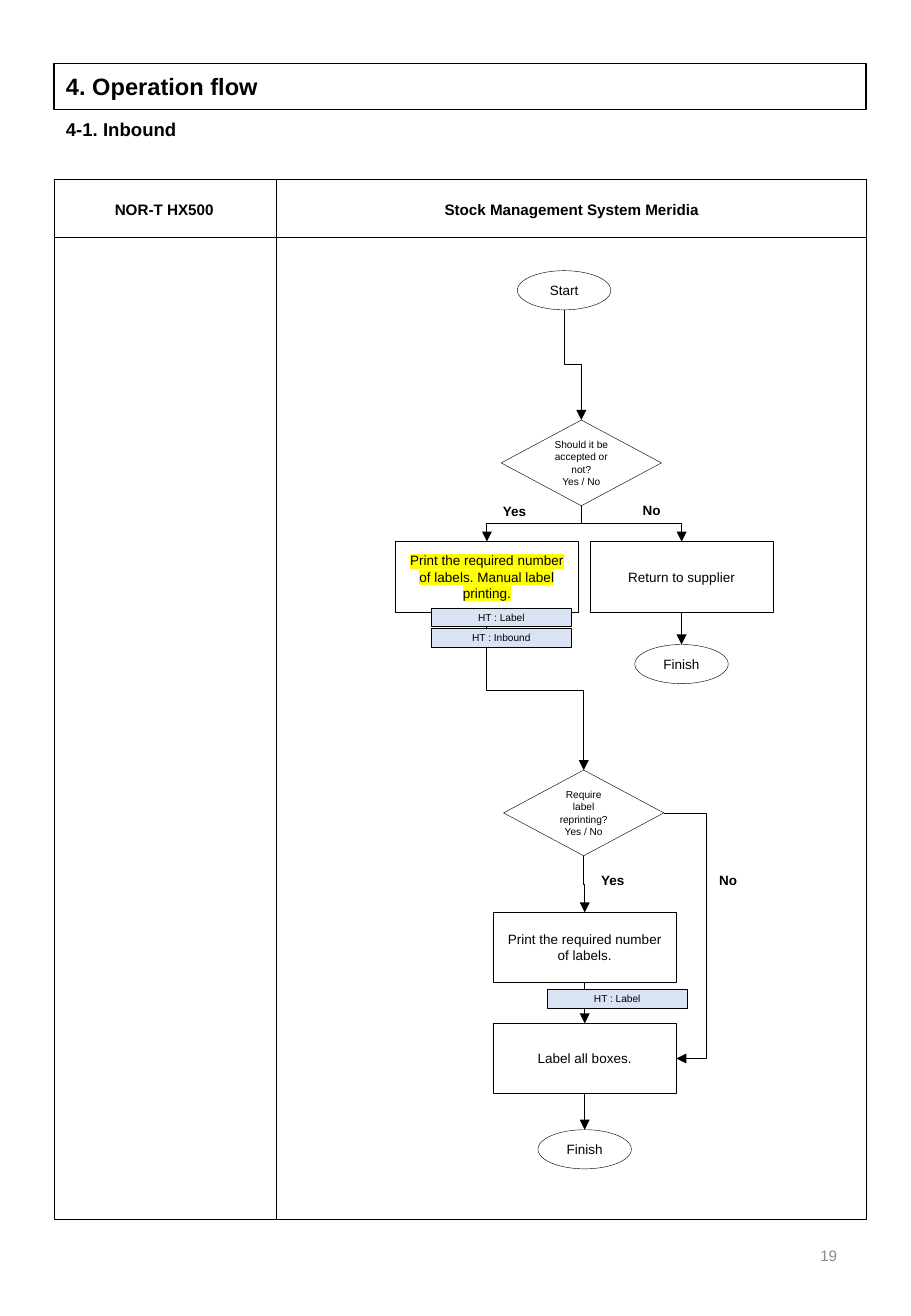
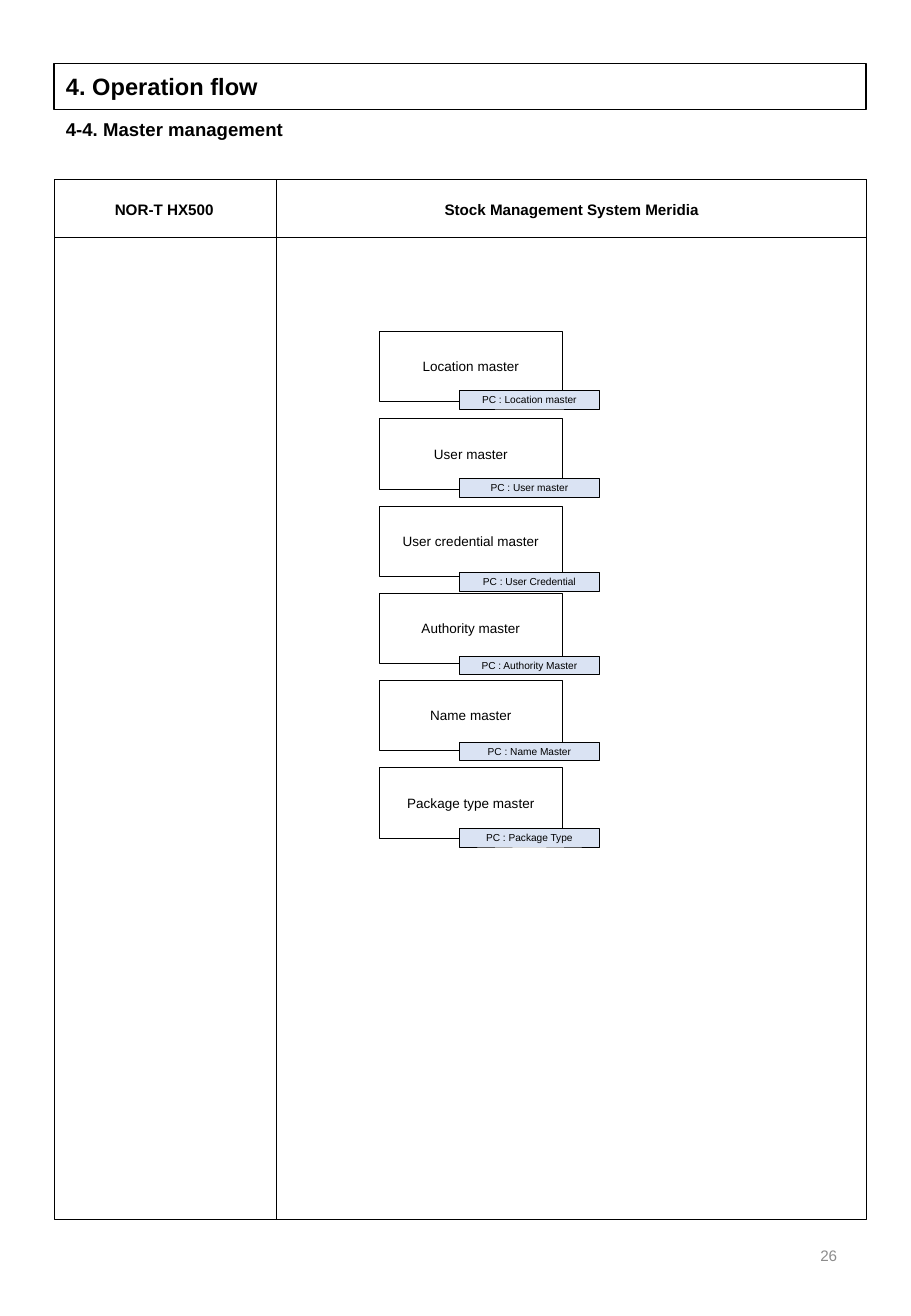
"""Build two operation-flow slides: the inbound flowchart and the master management list."""
from dataclasses import dataclass

from lxml import etree
from pptx import Presentation
from pptx.dml.color import RGBColor
from pptx.enum.shapes import MSO_CONNECTOR, MSO_SHAPE
from pptx.enum.text import MSO_ANCHOR, PP_ALIGN
from pptx.oxml.ns import qn
from pptx.util import Pt

RECT = MSO_SHAPE.RECTANGLE
OVAL = MSO_SHAPE.OVAL
DECISION = MSO_SHAPE.FLOWCHART_DECISION
STRAIGHT = MSO_CONNECTOR.STRAIGHT
ELBOW = MSO_CONNECTOR.ELBOW
LEFT, CENTER, RIGHT = PP_ALIGN.LEFT, PP_ALIGN.CENTER, PP_ALIGN.RIGHT
TOP, MIDDLE = MSO_ANCHOR.TOP, MSO_ANCHOR.MIDDLE

FONT = "Arial"
BLACK, GRAY, TAG_BLUE, YELLOW = "000000", "8C8C8C", "DAE3F3", "FFFF00"
HAIRLINE = 0.25
FRAME_X, FRAME_Y, FRAME_W, FRAME_H = 32, 106.3, 481.5, 616.2
HEADER_H = 34
DIVIDER_X = 164
SIDE_TOP, SIDE_BOTTOM, SIDE_RIGHT = 0, 2, 3
OVAL_BOTTOM = 4


@dataclass(frozen=True)
class Kind:
    shape: int
    w: float
    h: float
    size: float
    fill: str | None = None


BOX = Kind(RECT, 108.7, 41.6, 8)
CHOICE = Kind(DECISION, 95, 50.8, 6)
TERMINAL = Kind(OVAL, 55.4, 23.2, 8)
TAG = Kind(RECT, 83, 11, 6, TAG_BLUE)


@dataclass(frozen=True)
class Node:
    kind: Kind
    text: str
    cx: float
    top: float
    highlight: str | None = None


@dataclass(frozen=True)
class Link:
    start: str
    end: str
    bend_x: float | None = None


@dataclass(frozen=True)
class Answer:
    text: str
    x: float
    y: float


STEPS = {
    "start": Node(TERMINAL, "Start", 334.4, 160.4),
    "accept": Node(CHOICE, "Should it be accepted or not?\nYes / No", 344.6, 248.9),
    "manual": Node(BOX, "Print the required number of labels. Manual label printing.",
                   288.6, 320.9, YELLOW),
    "return": Node(BOX, "Return to supplier", 404, 320.9),
    "returned": Node(TERMINAL, "Finish", 404, 381.9),
    "reprint": Node(CHOICE, "Require label reprinting?\nYes / No", 346, 456.3),
    "print": Node(BOX, "Print the required number of labels.", 346.6, 540.6),
    "label": Node(BOX, "Label all boxes.", 346.6, 606.4),
    "finish": Node(TERMINAL, "Finish", 346.6, 669.4),
}
LINKS = [
    Link("start", "accept"),
    Link("accept", "manual"),
    Link("accept", "return"),
    Link("return", "returned"),
    Link("manual", "reprint"),
    Link("reprint", "print"),
    Link("print", "label"),
    Link("reprint", "label", 418.7),
    Link("label", "finish"),
]
INBOUND_TAGS = [
    Node(TAG, "HT : Label", 297.2, 360.4),
    Node(TAG, "HT : Inbound", 297.2, 372.4),
    Node(TAG, "HT : Label", 365.9, 586.2),
]
ANSWERS = [
    Answer("Yes", 286.6, 294.2),
    Answer("No", 367.9, 293.8),
    Answer("Yes", 344.9, 513.4),
    Answer("No", 413.3, 513.4),
]
MASTERS = [
    ("Location master", "PC : Location master", 231.4),
    ("User master", "PC : User master", 283.5),
    ("User credential master", "PC : User Credential", 339.2),
    ("Authority master", "PC : Authority Master", 388.8),
    ("Name master", "PC : Name Master", 439.8),
    ("Package type master", "PC : Package Type", 490.8),
]
MASTER_X, MASTER_Y, MASTER_PITCH, MASTER_TAG_X = 279.1, 196.4, 51.7, 313.8


def rgb(color: str) -> RGBColor:
    return RGBColor.from_string(color)


def write(tf, text: str, *, size: float, bold: bool = False, color: str = BLACK,
          align=CENTER, anchor=MIDDLE, highlight: str | None = None) -> None:
    tf.word_wrap = True
    tf.vertical_anchor = anchor
    for i, line in enumerate(text.split("\n")):
        p = tf.add_paragraph() if i else tf.paragraphs[0]
        p.alignment = align
        r = p.add_run()
        r.text = line
        r.font.size = Pt(size)
        r.font.bold = bold
        r.font.color.rgb = rgb(color)
        r.font.name = FONT
        if highlight:
            mark = etree.Element(qn("a:highlight"))
            etree.SubElement(mark, qn("a:srgbClr"), val=highlight)
            r.font._element.find(qn("a:solidFill")).addnext(mark)


def add_text(s, text: str, x: float, y: float, w: float, h: float, **fmt) -> None:
    tb = s.shapes.add_textbox(Pt(x), Pt(y), Pt(w), Pt(h))
    write(tb.text_frame, text, **fmt)


def add_outline(s, shape: int, x: float, y: float, w: float, h: float, *,
                line: float = HAIRLINE, fill: str | None = None):
    sp = s.shapes.add_shape(shape, Pt(x), Pt(y), Pt(w), Pt(h))
    sp.shadow.inherit = False
    if fill:
        sp.fill.solid()
        sp.fill.fore_color.rgb = rgb(fill)
    else:
        sp.fill.background()
    sp.line.color.rgb = rgb(BLACK)
    sp.line.width = Pt(line)
    return sp


def add_node(s, node: Node):
    k = node.kind
    sp = add_outline(s, k.shape, node.cx - k.w / 2, node.top, k.w, k.h, fill=k.fill)
    write(sp.text_frame, node.text, size=k.size, highlight=node.highlight)
    return sp


def add_line(s, kind: int, x1: float, y1: float, x2: float, y2: float, arrow: bool = False):
    c = s.shapes.add_connector(kind, Pt(x1), Pt(y1), Pt(x2), Pt(y2))
    c.line.color.rgb = rgb(BLACK)
    c.line.width = Pt(0.5)
    if arrow:
        etree.SubElement(c.line._get_or_add_ln(), qn("a:tailEnd"), type="triangle")
    etree.SubElement(c.element.spPr, qn("a:effectLst"))
    return c


def turn_downward(c, x1: float, y1: float, x2: float, y2: float) -> None:
    run, drop = abs(x2 - x1), y2 - y1
    c.left, c.top = Pt((x1 + x2 - drop) / 2), Pt((y1 + y2 - run) / 2)
    c.width, c.height = Pt(drop), Pt(run)
    xfrm = c.element.spPr.find(qn("a:xfrm"))
    xfrm.set("rot", str((270 if x2 > x1 else 90) * 60000))
    xfrm.set("flipH", "1" if x2 > x1 else "0")


def add_link(s, link: Link, shapes: dict) -> None:
    a, b = STEPS[link.start], STEPS[link.end]
    if link.bend_x is None:
        ends = a.cx, a.top + a.kind.h, b.cx, b.top
        sides = SIDE_BOTTOM, SIDE_TOP
    else:
        ends = (a.cx + a.kind.w / 2, a.top + a.kind.h / 2,
                b.cx + b.kind.w / 2, b.top + b.kind.h / 2)
        sides = SIDE_RIGHT, SIDE_RIGHT
    x1, _, x2, _ = ends
    c = add_line(s, STRAIGHT if x1 == x2 else ELBOW, *ends, arrow=True)
    c.begin_connect(shapes[link.start], sides[0])
    c.end_connect(shapes[link.end], sides[1])
    if a.kind is TERMINAL:
        c.element.find(".//" + qn("a:stCxn")).set("idx", str(OVAL_BOTTOM))
    if link.bend_x is not None:
        ratio = round((link.bend_x - x1) / (x2 - x1) * 100000)
        guides = c.element.find(".//" + qn("a:avLst"))
        etree.SubElement(guides, qn("a:gd"), name="adj1", fmla=f"val {ratio}")
    elif x1 != x2:
        turn_downward(c, *ends)


def add_page(prs, subtitle: str, number: int):
    s = prs.slides.add_slide(prs.slide_layouts[6])
    add_text(s, str(number), 381.6, 723, 121.7, 41.8, size=9, color=GRAY, align=RIGHT)
    title = add_outline(s, RECT, FRAME_X, 37.6, FRAME_W, 27.3, line=1)
    write(title.text_frame, "4. Operation flow", size=14, bold=True, align=LEFT)
    add_text(s, subtitle, FRAME_X, 66.2, FRAME_W, 21, size=11, bold=True,
             align=LEFT, anchor=TOP)
    for h in (FRAME_H, HEADER_H):
        add_outline(s, RECT, FRAME_X, FRAME_Y, FRAME_W, h)
    add_line(s, STRAIGHT, DIVIDER_X, FRAME_Y, DIVIDER_X, FRAME_Y + FRAME_H)
    right = FRAME_X + FRAME_W
    for text, x, end in (("NOR-T HX500", 30.6, DIVIDER_X),
                         ("Stock Management System Meridia", DIVIDER_X, right)):
        add_text(s, text, x, FRAME_Y + 0.5, end - x, HEADER_H, size=9, bold=True)
    return s


def build_inbound(prs) -> None:
    s = add_page(prs, "4-1. Inbound", 19)
    shapes = {name: add_node(s, node) for name, node in STEPS.items()}
    for link in LINKS:
        add_link(s, link, shapes)
    for tag in INBOUND_TAGS:
        add_node(s, tag)
    for answer in ANSWERS:
        add_text(s, answer.text, answer.x, answer.y, 36.7, 16.6, size=8, bold=True)


def build_masters(prs) -> None:
    s = add_page(prs, "4-4. Master management", 26)
    for i, (name, _, _) in enumerate(MASTERS):
        add_node(s, Node(BOX, name, MASTER_X, MASTER_Y + i * MASTER_PITCH))
    for _, tag, top in MASTERS:
        add_node(s, Node(TAG, tag, MASTER_TAG_X, top))


def main() -> None:
    prs = Presentation()
    prs.slide_width, prs.slide_height = Pt(540), Pt(779.76)
    build_inbound(prs)
    build_masters(prs)
    prs.save("out.pptx")


if __name__ == "__main__":
    main()
